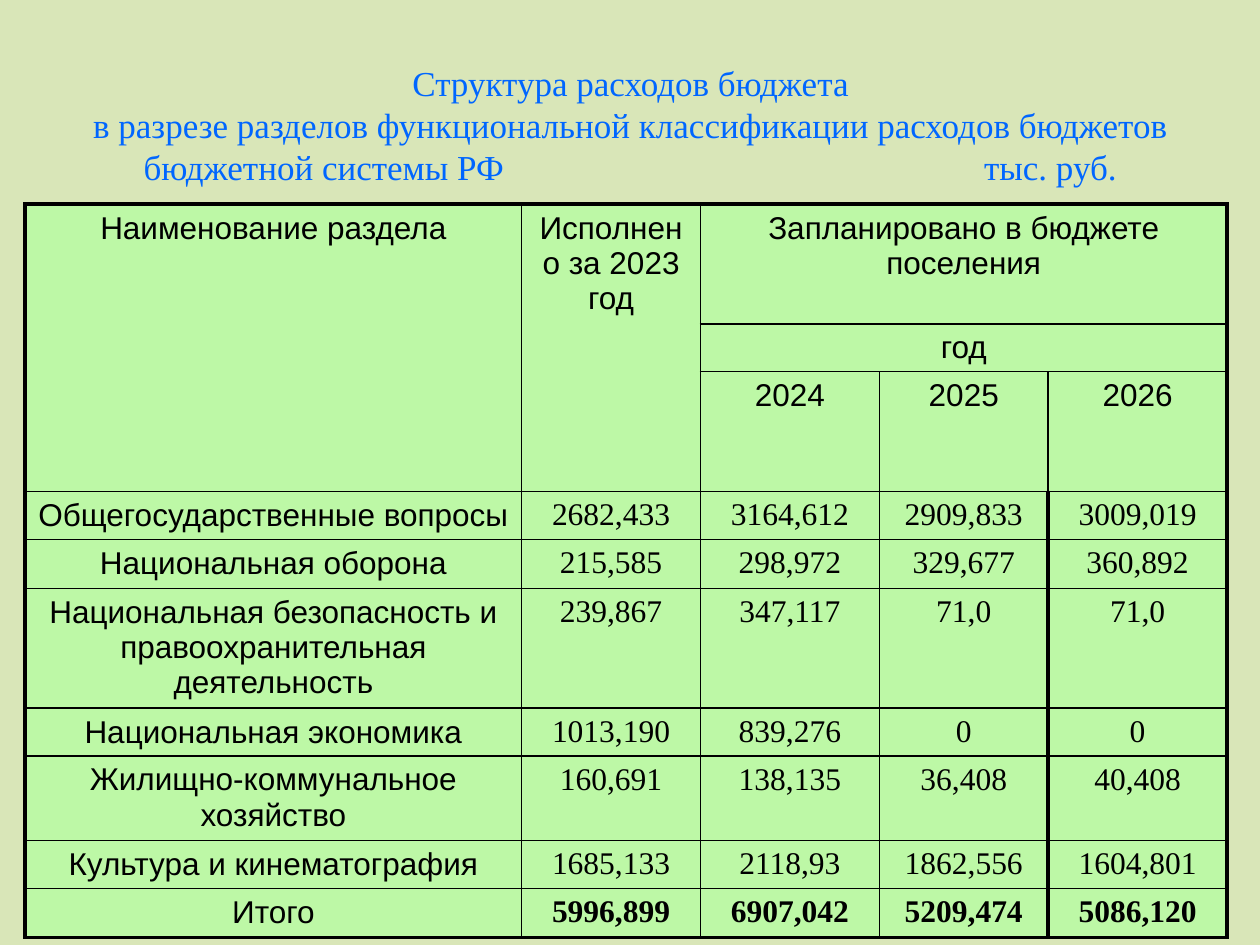
import pptx
import pptx.util
import pptx.dml.color
import pptx.enum.text
import pptx.oxml
import lxml.etree

Inches = pptx.util.Inches
Pt = pptx.util.Pt
align = pptx.enum.text.PP_ALIGN
colors = {"page": "D9E6B8", "cell": "BDF8A6", "title": "0066FF", "ink": "000000"}


def write(para, text, font="Arial", size=18, color="ink", bold=False, side=align.CENTER, before=0):
    para.text = text
    para.alignment = side
    para.space_before = Pt(before)
    for run in para.runs:
        run.font.name = font
        run.font.size = Pt(size)
        run.font.bold = bold
        run.font.color.rgb = pptx.dml.color.RGBColor.from_string(colors[color])


def border(cell, **widths):
    props = cell._tc.get_or_add_tcPr()
    for side in ("L", "R", "T", "B"):
        line = lxml.etree.SubElement(props, pptx.oxml.ns.qn("a:ln" + side), w=str(Pt(widths[side])))
        fill = lxml.etree.SubElement(line, pptx.oxml.ns.qn("a:solidFill"))
        lxml.etree.SubElement(fill, pptx.oxml.ns.qn("a:srgbClr"), val=colors["ink"])


deck = pptx.Presentation()
deck.slide_width = Inches(10)
deck.slide_height = Inches(7.5)
slide = deck.slides.add_slide(deck.slide_layouts[5])
back = slide.background.fill
back.solid()
back.fore_color.rgb = pptx.dml.color.RGBColor.from_string(colors["page"])

title = slide.shapes.title
title.left, title.top = Inches(0.51), Inches(0.3)
title.width, title.height = Inches(8.99), Inches(1.08)
frame = title.text_frame
frame.word_wrap = True
frame.auto_size = pptx.enum.text.MSO_AUTO_SIZE.NONE
frame.vertical_anchor = pptx.enum.text.MSO_ANCHOR.MIDDLE
frame.margin_top = Inches(0.34)
style = {"font": "Times New Roman", "size": 20, "color": "title"}
write(frame.paragraphs[0],
      "Структура расходов бюджета\vв разрезе разделов функциональной классификации расходов бюджетов",
      **style)
last = frame.add_paragraph()
write(last, "\tбюджетной системы РФ\tтыс. руб.", side=align.LEFT, **style)
tabs = lxml.etree.SubElement(last._p.get_or_add_pPr(), pptx.oxml.ns.qn("a:tabLst"))
for stop in (0.53, 7.2):
    lxml.etree.SubElement(tabs, pptx.oxml.ns.qn("a:tab"), pos=str(Inches(stop)), algn="l")

rows = [
    ["Наименование раздела", "Исполнено за 2023 год", "Запланировано в бюджете поселения", "", ""],
    ["", "", "год", "", ""],
    ["", "", "2024", "2025", "2026"],
    ["Общегосударственные вопросы", "2682,433", "3164,612", "2909,833", "3009,019"],
    ["Национальная оборона", "215,585", "298,972", "329,677", "360,892"],
    ["Национальная безопасность и правоохранительная деятельность",
     "239,867", "347,117", "71,0", "71,0"],
    ["Национальная экономика", "1013,190", "839,276", "0", "0"],
    ["Жилищно-коммунальное хозяйство", "160,691", "138,135", "36,408", "40,408"],
    ["Культура и кинематография", "1685,133", "2118,93", "1862,556", "1604,801"],
    ["Итого", "5996,899", "6907,042", "5209,474", "5086,120"],
]
widths = [3.94, 1.42, 1.42, 1.34, 1.42]
heights = [0.95, 0.38, 0.95, 0.38, 0.39, 0.95, 0.38, 0.67, 0.38, 0.39]
head = 3
thin, thick = 0.96, 2.21

table = slide.shapes.add_table(len(rows), len(widths), Inches(0.2), Inches(1.62),
                               Inches(sum(widths)), Inches(sum(heights))).table
table.first_row = False
table.horz_banding = False
for col, width in zip(table.columns, widths):
    col.width = Inches(width)
for row, height in zip(table.rows, heights):
    row.height = Inches(height)
for x in (0, 1):
    table.cell(0, x).merge(table.cell(2, x))
for y in (0, 1):
    table.cell(y, 2).merge(table.cell(y, 4))

for y, row in enumerate(rows):
    for x, text in enumerate(row):
        cell = table.cell(y, x)
        right = x + cell.span_width if cell.is_merge_origin else x + 1
        low = y + cell.span_height if cell.is_merge_origin else y + 1
        data = y >= head
        border(cell,
               L=thick if x == 0 or data and x == 4 else thin,
               R=thick if right == len(widths) or data and x == 3 else thin,
               T=thick if y == 0 else thin,
               B=thick if low == len(rows) else thin)
        cell.fill.solid()
        cell.fill.fore_color.rgb = pptx.dml.color.RGBColor.from_string(colors["cell"])
        if text:
            value = data and x > 0
            write(cell.text_frame.paragraphs[0], text,
                  font="Times New Roman" if value else "Arial",
                  bold=value and y == len(rows) - 1,
                  before=3.6 if value else 0)

deck.save("out.pptx")
